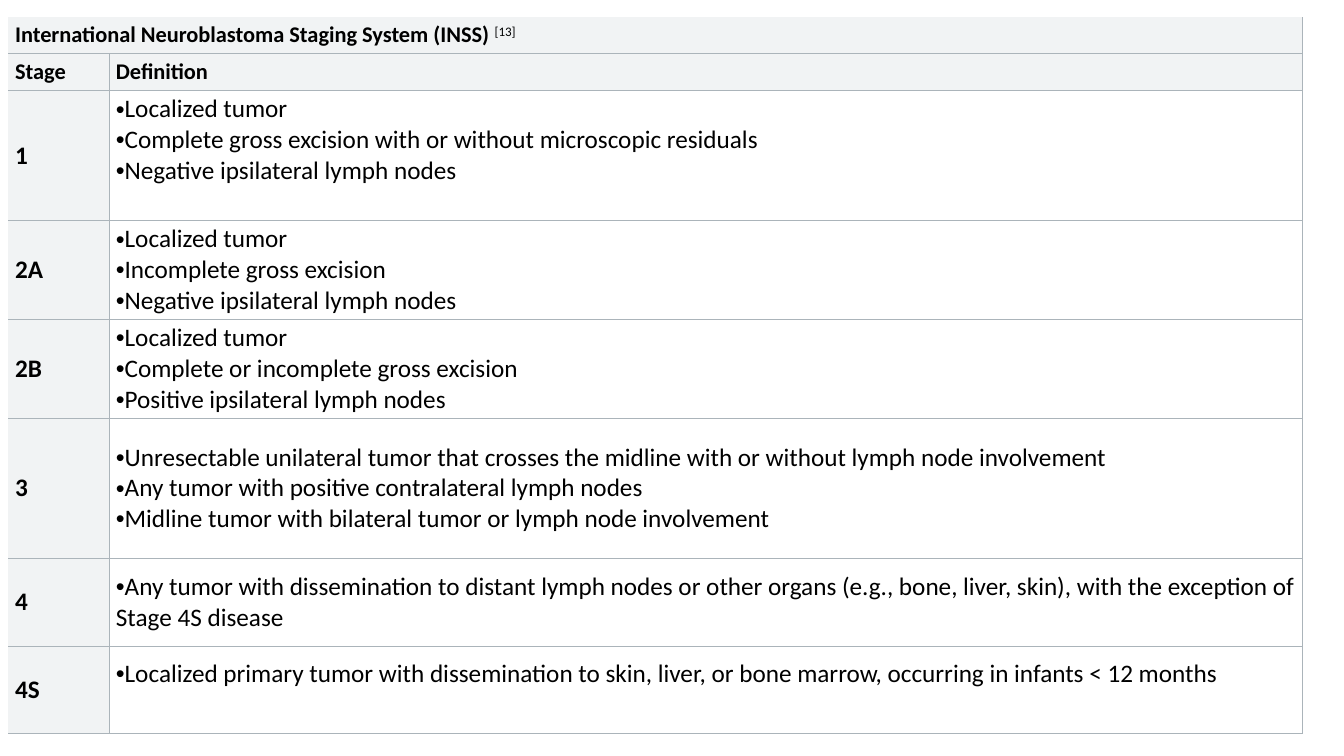
from lxml.etree import SubElement
from pptx import Presentation
from pptx.dml.color import RGBColor
from pptx.enum.text import MSO_ANCHOR
from pptx.oxml.ns import qn
from pptx.util import Inches, Pt

BLACK = RGBColor(0x00, 0x00, 0x00)
PALE = RGBColor(0xF1, 0xF3, 0xF4)
RULE = RGBColor(0xAB, 0xB4, 0xBA)

FONT, BULLET_FONT = "Calibri", "Arial"
HEAD_SIZE, BODY_SIZE = 16, 18
PAD_LEFT, PAD_RIGHT, PAD_Y = 0.07, 0.05, 0.03
LINE_GAP = 0.31
LEFT, TOP = 0.08, 0.17
COLS = [1, 11.84]
HEAD_ROWS = [0.36, 0.37]

STAGES = [
    ("1", 1.29, LINE_GAP, [
        "Localized tumor",
        "Complete gross excision with or without microscopic residuals",
        "Negative ipsilateral lymph nodes"]),
    ("2A", 0.98, 0, [
        "Localized tumor",
        "Incomplete gross excision",
        "Negative ipsilateral lymph nodes"]),
    ("2B", 0.98, 0, [
        "Localized tumor",
        "Complete or incomplete gross excision",
        "Positive ipsilateral lymph nodes"]),
    ("3", 1.39, 0, [
        "Unresectable unilateral tumor that crosses the midline with or without lymph node involvement",
        "Any tumor with positive contralateral lymph nodes",
        "Midline tumor with bilateral tumor or lymph node involvement"]),
    ("4", 0.87, 0, [
        "Any tumor with dissemination to distant lymph nodes or other organs "
        "(e.g., bone, liver, skin), with the exception of Stage 4S disease"]),
    ("4S", 0.87, LINE_GAP, [
        "Localized primary tumor with dissemination to skin, liver, or bone marrow, "
        "occurring in infants < 12 months"]),
]


def set_borders(cell, sides):
    tc_pr = cell._tc.get_or_add_tcPr()
    for side in "LRTB":
        ln = SubElement(tc_pr, qn(f"a:ln{side}"), w=str(Pt(0.6)))
        if side in sides:
            fill = SubElement(ln, qn("a:solidFill"))
            SubElement(fill, qn("a:srgbClr"), val=str(RULE))
        else:
            SubElement(ln, qn("a:noFill"))


def format_cell(cell, sides, fill=None, extra_bottom=0):
    cell.vertical_anchor = MSO_ANCHOR.MIDDLE
    cell.margin_left = Inches(PAD_LEFT)
    cell.margin_right = Inches(PAD_RIGHT)
    cell.margin_top = Inches(PAD_Y)
    cell.margin_bottom = Inches(PAD_Y + extra_bottom)
    set_borders(cell, sides)
    if fill is None:
        cell.fill.background()
    else:
        cell.fill.solid()
        cell.fill.fore_color.rgb = fill


def format_font(p, size, bold):
    p.font.name = FONT
    p.font.size = Pt(size)
    p.font.bold = bold
    p.font.color.rgb = BLACK


def add_label(cell, text, size, sides):
    format_cell(cell, sides, PALE)
    p = cell.text_frame.paragraphs[0]
    p.add_run().text = text
    format_font(p, size, True)
    return p


def add_bullets(cell, lines, extra_bottom):
    format_cell(cell, "LRTB", extra_bottom=extra_bottom)
    tf = cell.text_frame
    for i, line in enumerate(lines):
        p = tf.add_paragraph() if i else tf.paragraphs[0]
        p_pr = p._p.get_or_add_pPr()
        SubElement(p_pr, qn("a:buFont"), typeface=BULLET_FONT)
        SubElement(p_pr, qn("a:buChar"), char="•")
        p.add_run().text = line
        format_font(p, BODY_SIZE, False)


def add_citation(p, text):
    r = p.add_run()
    r.text = text
    r.font.bold = False
    r._r.get_or_add_rPr().set("baseline", "30000")


def add_staging_table(slide):
    heights = HEAD_ROWS + [height for _, height, _, _ in STAGES]
    table = slide.shapes.add_table(
        len(heights), len(COLS), Inches(LEFT), Inches(TOP),
        Inches(sum(COLS)), Inches(sum(heights))).table
    table.first_row = table.horz_banding = False
    for column, width in zip(table.columns, COLS):
        column.width = Inches(width)
    for row, height in zip(table.rows, heights):
        row.height = Inches(height)

    table.cell(0, 0).merge(table.cell(0, 1))
    format_cell(table.cell(0, 1), "RB", PALE)
    p = add_label(table.cell(0, 0), "International Neuroblastoma Staging System (INSS) ",
                  HEAD_SIZE, "RB")
    add_citation(p, "[13]")
    add_label(table.cell(1, 0), "Stage", HEAD_SIZE, "RTB")
    add_label(table.cell(1, 1), "Definition", HEAD_SIZE, "LRTB")
    for i, (stage, _, extra_bottom, lines) in enumerate(STAGES, len(HEAD_ROWS)):
        add_label(table.cell(i, 0), stage, BODY_SIZE, "RTB")
        add_bullets(table.cell(i, 1), lines, extra_bottom)


def main():
    prs = Presentation()
    prs.slide_width, prs.slide_height = Inches(13.33), Inches(7.5)
    slide = prs.slides.add_slide(prs.slide_layouts[6])
    add_staging_table(slide)
    prs.save("out.pptx")


if __name__ == "__main__":
    main()
